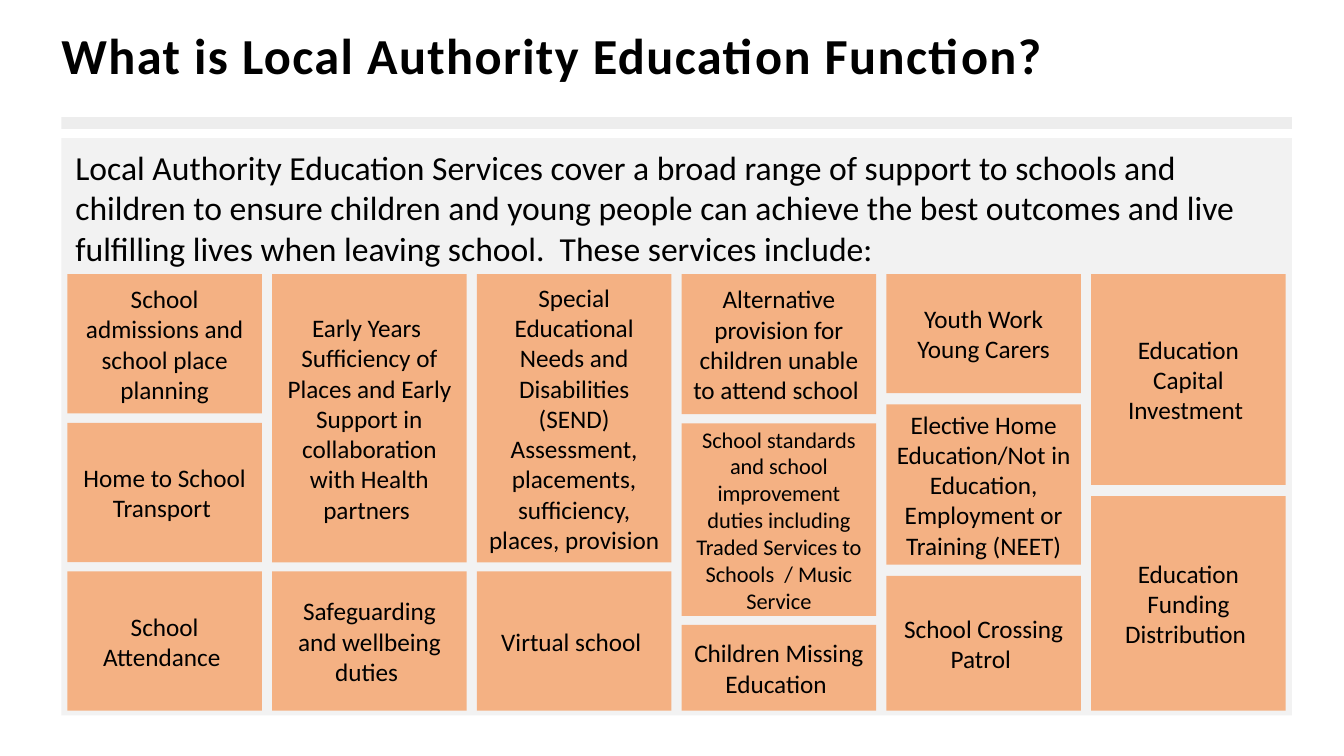
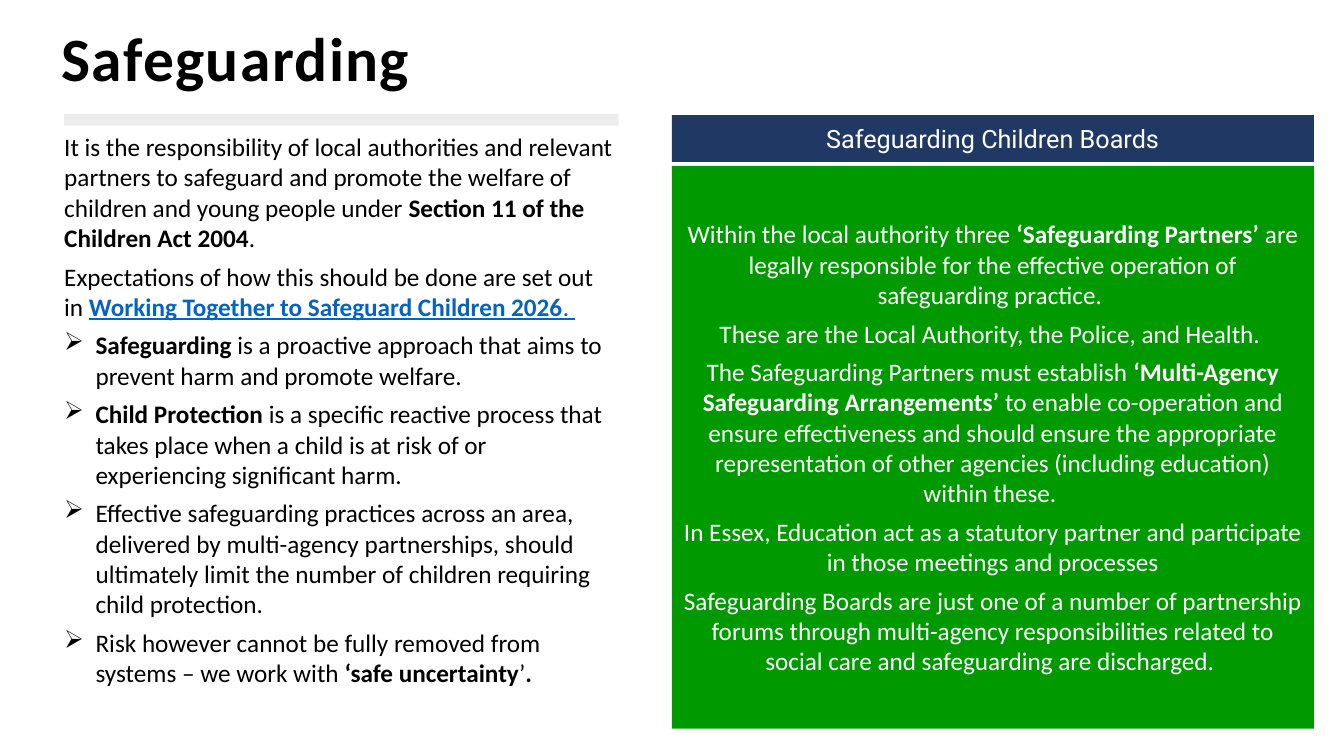
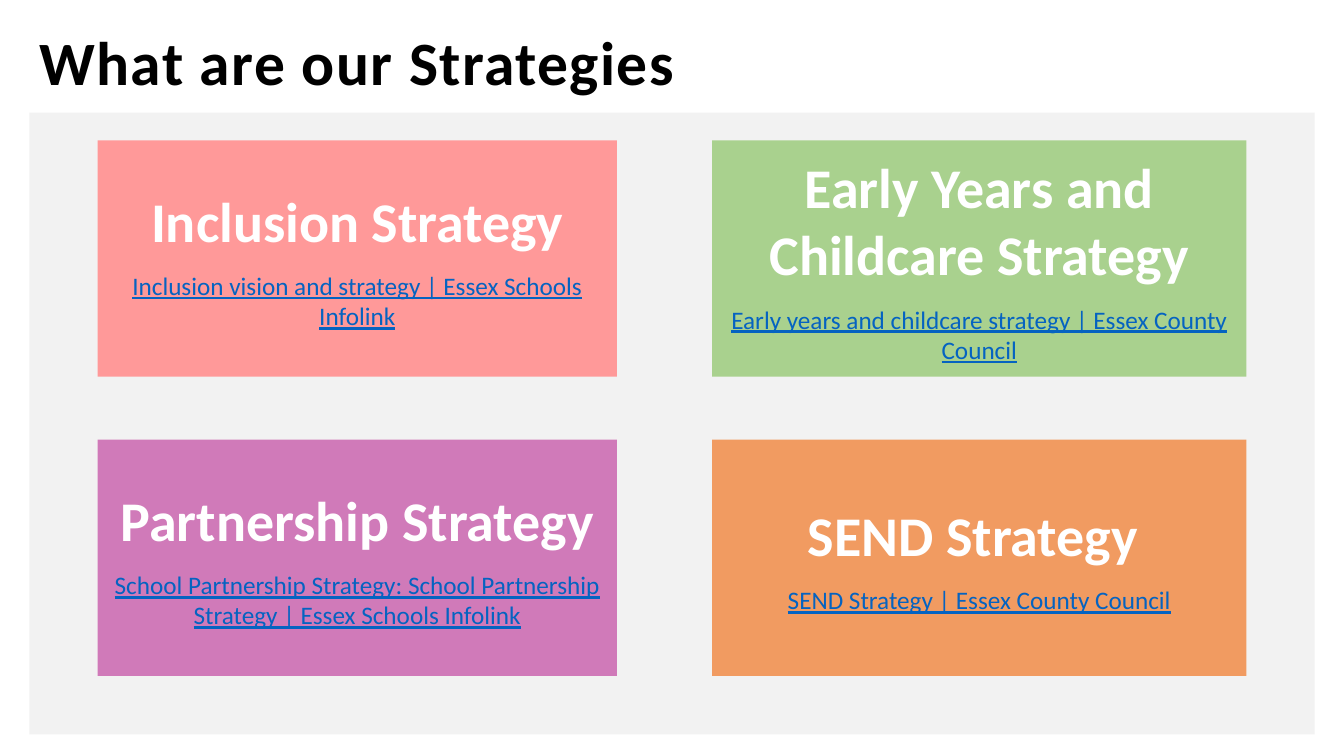
from collections import namedtuple
from lxml.etree import SubElement as Sub
from pptx import Presentation
from pptx.dml.color import RGBColor as Rgb
from pptx.enum.shapes import MSO_SHAPE as Kind
from pptx.enum.text import MSO_ANCHOR as Anchor, PP_ALIGN as Align
from pptx.oxml.ns import qn
from pptx.util import Cm, Pt

Box = namedtuple("Box", "x y w h")

BLACK, WHITE, LINK = "000000", "FFFFFF", "0563C1"
BAR, PANEL, PEACH = "EDEDED", "F2F2F2", "F4B183"
GREEN, NAVY = "009900", "203864"
BASE = {"name": "Calibri", "size": Pt(18), "bold": False}
BOLD = {"bold": True}
URL = {"underline": True, "color": LINK}
INDENT = Cm(0.79)

COLUMNS = [
    [(3.51, ["School admissions and school place planning"], 18),
     (3.51, ["Home to School Transport "], 18),
     (3.51, ["School Attendance "], 18)],
    [(7.26, ["Early Years ", "Sufficiency of Places and Early Support in "
             "collaboration with Health partners "], 18),
     (3.51, ["Safeguarding and wellbeing duties "], 18)],
    [(7.26, ["Special Educational Needs and Disabilities (SEND) Assessment, "
             "placements, sufficiency, places, provision"], 18),
     (3.51, ["Virtual school "], 18)],
    [(3.53, ["Alternative provision for children unable to attend school "], 18),
     (4.85, ["School standards and school improvement duties including "
             "Traded Services to Schools  / Music Service"], 16),
     (2.16, ["Children Missing Education "], 18)],
    [(3, ["Youth Work", "Young Carers"], 18),
     (4.04, ["Elective Home Education/Not in Education, Employment or "
             "Training (NEET)"], 18),
     (3.4, ["School Crossing Patrol "], 18)],
    [(5.31, ["Education Capital Investment "], 18),
     (5.41, ["Education Funding Distribution "], 18)],
]

DUTIES = [
    [("It is the responsibility of local authorities and relevant partners to "
      "safeguard and promote the welfare of children and young people under ", {}),
     ("Section 11 of the Children Act 2004", BOLD), (".", {})],
    [("Expectations of how this should be done are set out in ", {}),
     ("Working Together to Safeguard Children 2026", {**URL, **BOLD}),
     (". ", URL)],
]
POINTS = [
    [("Safeguarding", BOLD),
     (" is a proactive approach that aims to prevent harm and promote welfare.", {})],
    [("Child Protection ", BOLD),
     ("is a specific reactive process that takes place when a child is at risk of "
      "or experiencing significant harm.", {})],
    "Effective safeguarding practices across an area, delivered by multi-agency "
    "partnerships, should ultimately limit the number of children requiring child "
    "protection.",
    [("Risk however cannot be fully removed from systems – we work with ", {}),
     ("‘safe uncertainty", BOLD), ("’", {}), (".", BOLD)],
]
BOARDS = [
    [("Within the local authority three ", {}), ("‘Safeguarding Partners’ ", BOLD),
     ("are legally responsible for the effective operation of safeguarding "
      "practice. ", {})],
    "These are the Local Authority, the Police, and Health. ",
    [("The Safeguarding Partners must establish ", {}),
     ("‘Multi-Agency Safeguarding Arrangements’", BOLD),
     (" to enable co-operation and ensure effectiveness and should ensure the "
      "appropriate representation of other agencies (including education) within "
      "these. ", {})],
    "In Essex, Education act as a statutory partner and participate in those "
    "meetings and processes",
    "Safeguarding Boards are just one of a number of partnership forums through "
    "multi-agency responsibilities related to social care and safeguarding are "
    "discharged. ",
]
CARDS = [
    ("Inclusion Strategy", "Inclusion vision and strategy | Essex Schools Infolink",
     "FF9999"),
    ("Early Years and Childcare Strategy",
     "Early years and childcare strategy | Essex County Council", "A9D18E"),
    ("Partnership Strategy",
     "School Partnership Strategy: School Partnership Strategy | Essex Schools "
     "Infolink", "D07AB9"),
    ("SEND Strategy ", "SEND Strategy | Essex County Council", "F19B61"),
]


def paint(part, tone):
    if hasattr(part, "solid"):
        part.solid()
        part.fore_color.rgb = Rgb.from_string(tone)
    else:
        part.color.rgb = Rgb.from_string(tone)


def style(font, **looks):
    for key, value in looks.items():
        if key == "color":
            paint(font, value)
        else:
            setattr(font, key, value)


def write(frame, paras, color=BLACK, align=Align.LEFT, after=0, **looks):
    for i, pieces in enumerate(paras):
        para = frame.paragraphs[0] if i == 0 else frame.add_paragraph()
        para.alignment, para.space_after = align, Pt(after)
        if isinstance(pieces, str):
            pieces = [(pieces, {})]
        for text, extra in pieces:
            run = para.add_run()
            run.text = text
            style(run.font, **{**BASE, "color": color, **looks, **extra})


def block(slide, box, tone):
    shape = slide.shapes.add_shape(Kind.RECTANGLE, *map(Cm, box))
    shape.shadow.inherit = False
    shape.line.fill.background()
    paint(shape.fill, tone)
    frame = shape.text_frame
    frame.word_wrap, frame.vertical_anchor = True, Anchor.MIDDLE
    return frame


def note(slide, box, anchor=Anchor.TOP):
    frame = slide.shapes.add_textbox(*map(Cm, box)).text_frame
    frame.word_wrap, frame.vertical_anchor = True, anchor
    return frame


def title(slide, box, text, size=44, anchor=Anchor.TOP):
    frame = note(slide, box, anchor)
    for side in ("left", "top", "right", "bottom"):
        setattr(frame, "margin_" + side, 0)
    write(frame, [text], size=Pt(size), bold=True)
    para = frame.paragraphs[0]
    para.line_spacing = 0.9
    para.runs[0].font._element.set("spc", "100")


def bullet(para):
    props = para._p.get_or_add_pPr()
    props.set("marL", str(INDENT))
    props.set("indent", str(-INDENT))
    Sub(props, qn("a:buChar")).set("char", "➢")


def grid(slide, box, columns, wide):
    step = (box.w - wide) / (len(columns) - 1)
    for i, column in enumerate(columns):
        gap = (box.h - sum(cell[0] for cell in column)) / (len(column) - 1)
        top = box.y
        for high, paras, size in column:
            frame = block(slide, Box(box.x + i * step, top, wide, high), PEACH)
            write(frame, paras, align=Align.CENTER, size=Pt(size))
            top += high + gap


def duties(slide, box):
    block(slide, Box(box.x + 0.25, box.y, 13.97, 0.3), BAR)
    frame = note(slide, Box(box.x, box.y + 0.25, box.w, box.h - 0.25), Anchor.MIDDLE)
    write(frame, DUTIES + POINTS, after=6)
    for para in frame.paragraphs[len(DUTIES):]:
        bullet(para)


def boards(slide, box):
    head = block(slide, Box(box.x, box.y, box.w, 1.18), NAVY)
    write(head, ["Safeguarding Children Boards"], WHITE, Align.CENTER, name="Roboto")
    body = block(slide, Box(box.x, box.y + 1.28, box.w, box.h - 1.28), GREEN)
    write(body, BOARDS, WHITE, Align.CENTER, after=6)


def cards(slide, box):
    block(slide, box, PANEL)
    for i, (name, link, tone) in enumerate(CARDS):
        row, col = divmod(i, 2)
        left, wide = [(1.72, 13.09), (17.21, 13.46)][col]
        spot = Box(box.x + left, box.y + 0.7 + row * 7.54, wide, 5.95)
        head = [(name, {"size": Pt(40), "bold": True})]
        frame = block(slide, spot, tone)
        write(frame, [head, [(link, URL)]], WHITE, Align.CENTER)
        frame.paragraphs[0].space_after = Pt(12)


def services(slide):
    title(slide, Box(1.55, 0.79, 28.17, 2.16),
          "What is Local Authority Education Function?", 36)
    block(slide, Box(1.55, 2.95, 31.01, 0.3), BAR)
    block(slide, Box(1.55, 3.48, 31.01, 14.55), PANEL)
    write(note(slide, Box(1.65, 3.58, 30.94, 3.3)),
          ["Local Authority Education Services cover a broad range of support to "
           "schools and children to ensure children and young people can achieve "
           "the best outcomes and live fulfilling lives when leaving school.  "
           "These services include:"], size=Pt(24))
    grid(slide, Box(1.7, 6.91, 30.7, 11), COLUMNS, 4.9)


def safety(slide):
    title(slide, Box(1.55, 0.71, 19.08, 2.16), "Safeguarding")
    duties(slide, Box(1.37, 2.87, 14.38, 14.65))
    boards(slide, Box(16.93, 2.9, 16.18, 15.46))


def plans(slide):
    title(slide, Box(0.99, 0.51, 31.88, 2.31), "What are our Strategies",
          anchor=Anchor.MIDDLE)
    cards(slide, Box(0.74, 2.84, 32.39, 15.67))


def main():
    deck = Presentation()
    deck.slide_width, deck.slide_height = Cm(33.87), Cm(19.05)
    for build in (services, safety, plans):
        build(deck.slides.add_slide(deck.slide_layouts[6]))
    deck.save("out.pptx")


if __name__ == "__main__":
    main()
